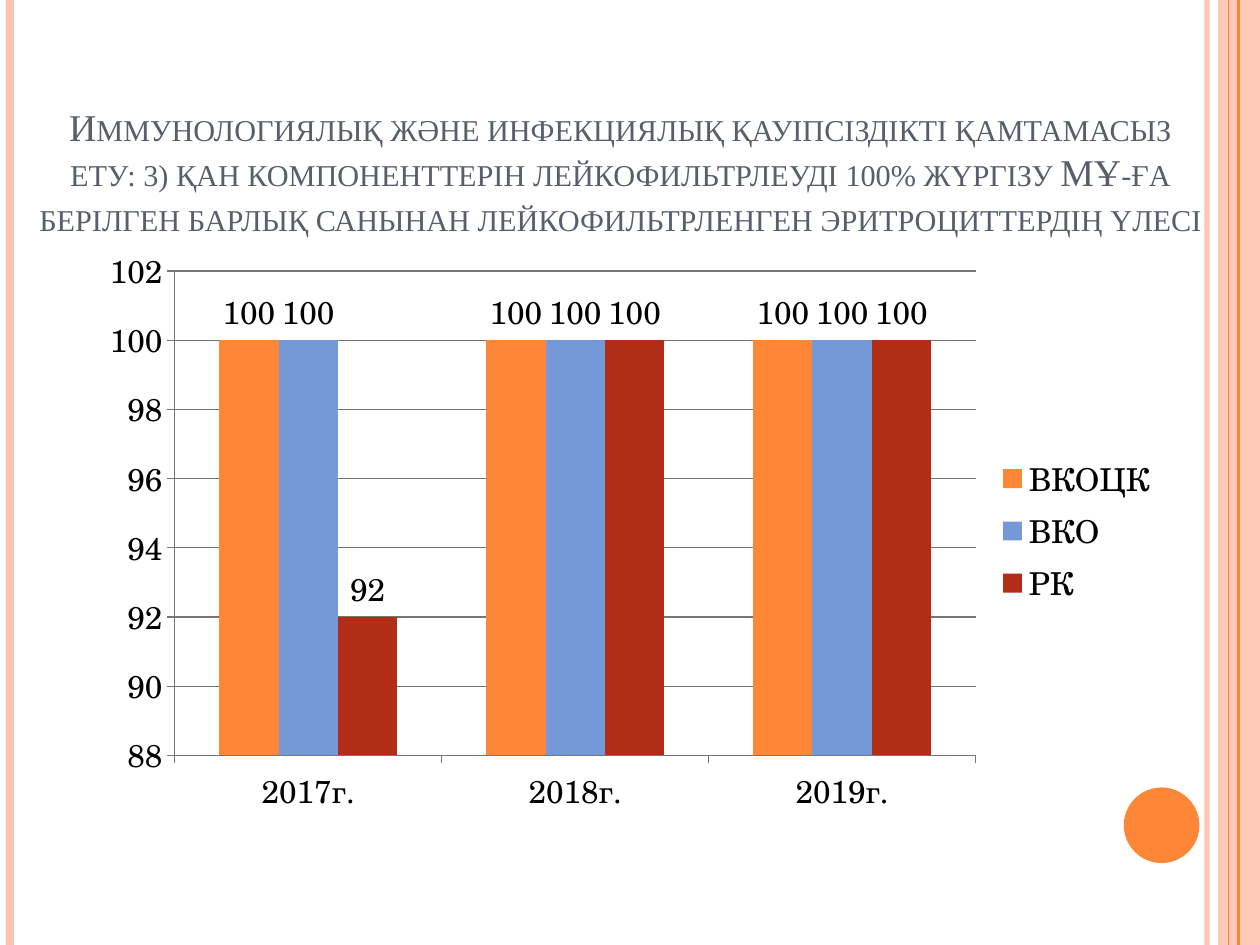
from lxml import etree
from pptx import Presentation
from pptx.chart.data import CategoryChartData
from pptx.dml.color import RGBColor
from pptx.enum.chart import XL_CHART_TYPE as ChartType, XL_LABEL_POSITION as LabelPosition
from pptx.enum.chart import XL_LEGEND_POSITION as LegendPosition, XL_TICK_MARK as TickMark
from pptx.enum.shapes import MSO_CONNECTOR as Connector, MSO_SHAPE as Shape
from pptx.enum.text import MSO_ANCHOR as Anchor, MSO_AUTO_SIZE as AutoSize, PP_ALIGN as Align
from pptx.oxml import parse_xml
from pptx.oxml.ns import nsdecls, qn
from pptx.util import Pt

WIDTH, HEIGHT = 720, 540
PEACH, ORANGE, GREY = "FEC3AE", "FE8637", "757575"
TITLE = ("Иммунологиялық және инфекциялық қауіпсіздікті қамтамасыз ету: "
         "3) қан компоненттерін лейкофильтрлеуді 100% жүргізу МҰ-ға берілген "
         "барлық санынан лейкофильтрленген эритроциттердің үлесі")
YEARS = ["2017г.", "2018г.", "2019г."]
SERIES = [
    ("ВКОЦК", (100, 100, 100), ORANGE),
    ("ВКО", (100, 100, 100), "7598D9"),
    ("РК", (92, 100, 100), "B32C16"),
]
# x, line width, colour, opacity in percent
STRIPES = [
    (689.8, 3, PEACH, 93),
    (5.8, 4.5, PEACH, 100),
    (707.8, 1.5, ORANGE, 100),
    (702, 0.75, ORANGE, 100),
]
PLOT_AREA = {"x": 0.08, "y": 0.06, "w": 0.74, "h": 0.82}


def rgb(colour):
    return RGBColor.from_string(colour)


def set_opacity(element, percent):
    colour = element.find(".//" + qn("a:srgbClr"))
    etree.SubElement(colour, qn("a:alpha")).set("val", str(percent * 1000))


def add_stripe(shapes, x, width, colour, opacity):
    stripe = shapes.add_connector(Connector.STRAIGHT, Pt(x), 0, Pt(x), Pt(HEIGHT))
    stripe.line.width = Pt(width)
    stripe.line.color.rgb = rgb(colour)
    if opacity < 100:
        set_opacity(stripe.line._get_or_add_ln(), opacity)
    etree.SubElement(stripe._element.spPr, qn("a:effectLst"))


def add_filled(shapes, kind, left, top, width, height, colour):
    shape = shapes.add_shape(kind, Pt(left), Pt(top), Pt(width), Pt(height))
    shape.shadow.inherit = False
    shape.fill.solid()
    shape.fill.fore_color.rgb = rgb(colour)
    shape.line.fill.background()
    return shape


def set_title(title):
    title.left, title.top, title.width, title.height = Pt(11.5), 0, Pt(686), Pt(163.4)
    frame = title.text_frame
    frame.text = TITLE
    frame.word_wrap = True
    frame.auto_size = AutoSize.NONE
    frame.vertical_anchor = Anchor.BOTTOM
    frame.margin_bottom = Pt(26.5)
    paragraph = frame.paragraphs[0]
    paragraph.alignment = Align.CENTER
    paragraph.line_spacing = Pt(25.9)
    run = paragraph.runs[0]
    run.font.name = "Times New Roman"
    run.font.size = Pt(21.6)
    run.font.color.rgb = rgb("575F6D")
    run.font._element.set("cap", "small")


def add_chart(shapes):
    data = CategoryChartData()
    data.categories = YEARS
    for name, values, _ in SERIES:
        data.add_series(name, values)
    chart = shapes.add_chart(ChartType.COLUMN_CLUSTERED, Pt(50.4), Pt(134.6),
                             Pt(618.5), Pt(337.7), data).chart
    chart.has_title = False
    chart.font.name = "TeX Gyre Schola"
    chart.font.size = Pt(18)
    chart.font.color.rgb = rgb("000000")
    chart.has_legend = True
    chart.legend.position = LegendPosition.RIGHT
    chart.legend.include_in_layout = False

    plot = chart.plots[0]
    plot.gap_width, plot.overlap = 150, 0
    plot.vary_by_categories = False
    plot.has_data_labels = True
    plot.data_labels.show_value = True
    plot.data_labels.position = LabelPosition.OUTSIDE_END
    for series, (_, _, colour) in zip(plot.series, SERIES):
        series.format.fill.solid()
        series.format.fill.fore_color.rgb = rgb(colour)

    values = chart.value_axis
    values.minimum_scale, values.maximum_scale, values.major_unit = 88, 102, 2
    values.has_major_gridlines = True
    for axis in (values, chart.category_axis):
        axis.major_tick_mark = TickMark.OUTSIDE
    for part in (values, values.major_gridlines, chart.category_axis):
        part.format.line.color.rgb = rgb(GREY)
        part.format.line.width = Pt(0.75)
    place_plot_area(chart)


def place_plot_area(chart):
    area = chart._chartSpace.chart.plotArea
    for old in area.findall(qn("c:layout")):
        area.remove(old)
    sizes = "".join(f'<c:{key} val="{value}"/>' for key, value in PLOT_AREA.items())
    area.insert(0, parse_xml(
        f'<c:layout {nsdecls("c")}><c:manualLayout><c:layoutTarget val="inner"/>'
        f'<c:xMode val="edge"/><c:yMode val="edge"/>{sizes}</c:manualLayout></c:layout>'))


def main():
    presentation = Presentation()
    presentation.slide_width, presentation.slide_height = Pt(WIDTH), Pt(HEIGHT)
    slide = presentation.slides.add_slide(presentation.slide_layouts[5])
    shapes = slide.shapes
    band = add_filled(shapes, Shape.RECTANGLE, 696, 0, 24, HEIGHT, PEACH)
    set_opacity(band._element.spPr, 87)
    for stripe in STRIPES:
        add_stripe(shapes, *stripe)
    add_filled(shapes, Shape.OVAL, 642.2, 450, 43.2, 43.2, ORANGE)
    set_title(shapes.title)
    add_chart(shapes)
    presentation.save("out.pptx")


if __name__ == "__main__":
    main()
